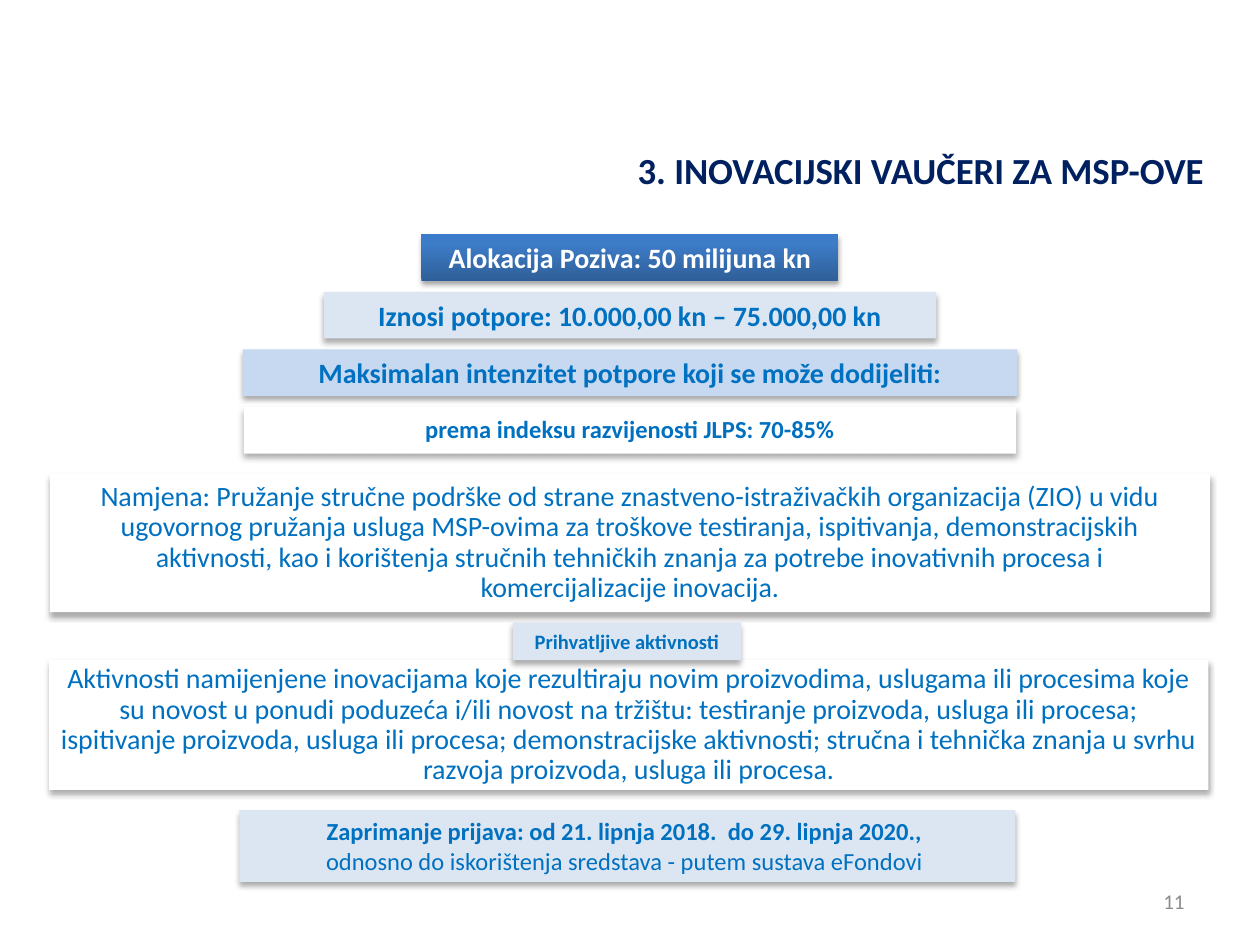
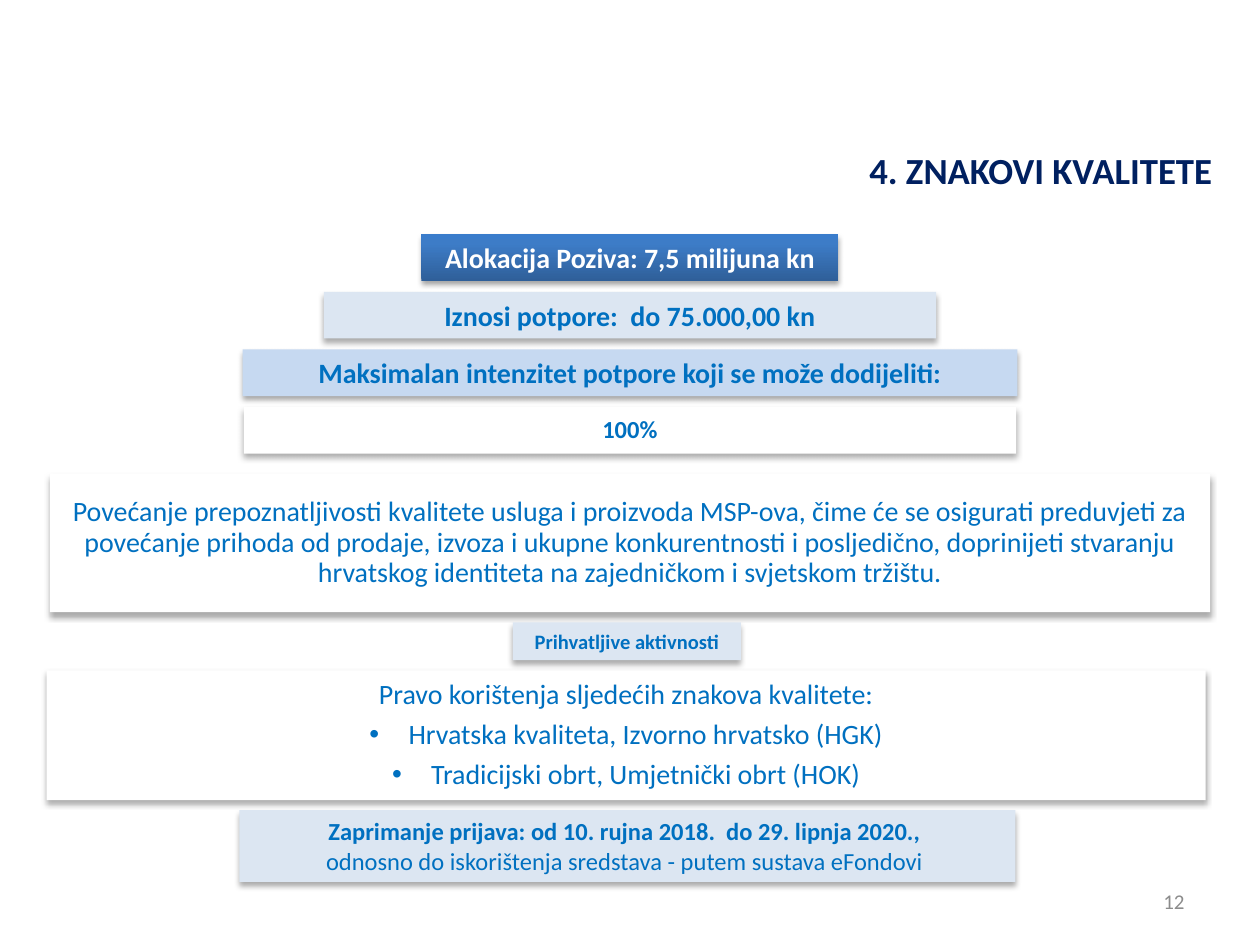
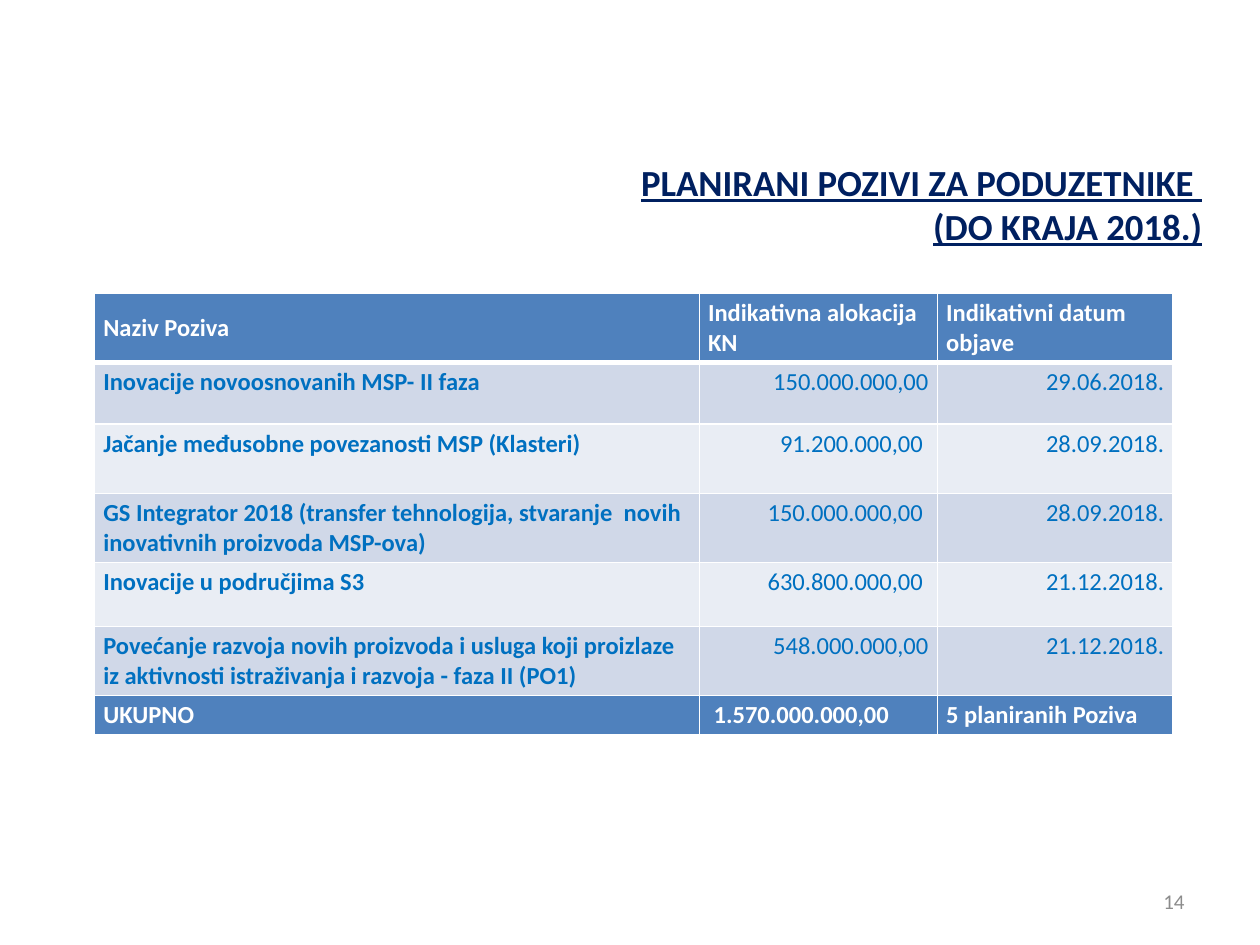
from pptx import Presentation
from pptx.dml.color import RGBColor
from pptx.enum.shapes import MSO_SHAPE
from pptx.enum.text import MSO_ANCHOR, PP_ALIGN
from pptx.oxml import parse_xml
from pptx.oxml.ns import nsdecls
from pptx.util import Inches, Pt

WIDE, HIGH = Inches(10), Inches(7.5)
UNIT = WIDE / 100
FONT = "Calibri"
WHITE = RGBColor(0xFF, 0xFF, 0xFF)
BLUE = RGBColor(0x00, 0x70, 0xC0)
NAVY = RGBColor(0x00, 0x20, 0x60)
GRAY = RGBColor(0x8C, 0x8C, 0x8C)
PALE = RGBColor(0xDC, 0xE6, 0xF2)
SKY = RGBColor(0xC6, 0xD9, 0xF1)
HEAD = RGBColor(0x4F, 0x81, 0xBD)
BANDS = RGBColor(0xD0, 0xD8, 0xE8), RGBColor(0xE9, 0xED, 0xF4)
DEEP = (0, "2F5F99"), (80, "3D7CC7"), (100, "3A7CCB")
SOFT = 32, 3.5, 2.2
FIRM = 35, 3.1, 1.8
LEFT, MID, RIGHT = PP_ALIGN.LEFT, PP_ALIGN.CENTER, PP_ALIGN.RIGHT

COLS = 48, 18.9, 18.7
ROWS = 4.2, 4.9, 5.5, 5.1, 5.1, 5.1, 2.5
CALLS = [
    ("Naziv Poziva", "Indikativna alokacija\nKN", "Indikativni datum objave"),
    ("Inovacije novoosnovanih MSP- II faza", "150.000.000,00", "29.06.2018."),
    ("Jačanje međusobne povezanosti MSP (Klasteri)", "91.200.000,00 ", "28.09.2018."),
    ("GS Integrator 2018 (transfer tehnologija, stvaranje  novih inovativnih proizvoda MSP-ova)",
     "150.000.000,00 ", "28.09.2018."),
    ("Inovacije u područjima S3", "630.800.000,00 ", "21.12.2018."),
    ("Povećanje razvoja novih proizvoda i usluga koji proizlaze iz aktivnosti istraživanja i razvoja - faza II (PO1)",
     "548.000.000,00", "21.12.2018."),
    ("UKUPNO", " 1.570.000.000,00", "5 planiranih Poziva"),
]


def grid(*cells):
    return [round(cell * UNIT) for cell in cells]


def write(frame, text, size=16, color=BLUE, bold=False, under=False, align=MID,
          lead=None, after=None, bullet=False, more=False):
    frame.word_wrap = True
    para = frame.add_paragraph() if more else frame.paragraphs[0]
    para.text = text
    if bullet:
        props = para._p.get_or_add_pPr()
        props.set("marL", str(Inches(0.31)))
        props.set("indent", str(-Inches(0.31)))
        props.append(parse_xml(f'<a:buFont {nsdecls("a")} typeface="Arial"/>'))
        props.append(parse_xml(f'<a:buChar {nsdecls("a")} char="•"/>'))
    para.alignment = align
    if lead:
        para.line_spacing = lead
    if after:
        para.space_after = Pt(after)
    for run in para.runs:
        font = run.font
        font.name, font.size, font.bold, font.underline = FONT, Pt(size), bold, under
        font.color.rgb = color


def shade(shape, alpha, blur, drop):
    shape.shadow.inherit = False
    shape._element.spPr.find("{*}effectLst").append(parse_xml(
        f'<a:outerShdw {nsdecls("a")} blurRad="{Pt(blur)}" dist="{Pt(drop)}" dir="5400000" rotWithShape="0">'
        f'<a:srgbClr val="000000"><a:alpha val="{alpha * 1000}"/></a:srgbClr></a:outerShdw>'))


def blend(shape, stops):
    marks = "".join(f'<a:gs pos="{pos * 1000}"><a:srgbClr val="{tone}"/></a:gs>' for pos, tone in stops)
    shape._element.spPr.find("{*}prstGeom").addnext(parse_xml(
        f'<a:gradFill {nsdecls("a")} rotWithShape="1"><a:gsLst>{marks}</a:gsLst>'
        '<a:lin ang="16200000" scaled="0"/></a:gradFill>'))


def strip(slide, top, width, height=3.7, fill=PALE, mid=50, cast=SOFT, anchor=MSO_ANCHOR.TOP):
    shape = slide.shapes.add_shape(MSO_SHAPE.RECTANGLE, *grid(mid - width / 2, top, width, height))
    if fill is DEEP:
        blend(shape, fill)
    else:
        shape.fill.solid()
        shape.fill.fore_color.rgb = fill
    shape.line.fill.background()
    shade(shape, *cast)
    frame = shape.text_frame
    frame.vertical_anchor = anchor
    return frame


def panel(slide, top, width, height, mid=50):
    frame = strip(slide, top, width, height, WHITE, mid, anchor=MSO_ANCHOR.MIDDLE)
    frame.margin_left = frame.margin_right = Inches(0.09)
    return frame


def label(slide, place, text, anchor=MSO_ANCHOR.MIDDLE, **style):
    frame = slide.shapes.add_textbox(*grid(*place)).text_frame
    frame.vertical_anchor = anchor
    write(frame, text, align=RIGHT, **style)


def title(slide, place, text, **style):
    label(slide, place, text, size=21, color=NAVY, bold=True, **style)


def start(deck, number):
    slide = deck.slides.add_slide(deck.slide_layouts[6])
    label(slide, (71.7, 69.5, 23.3, 4), number, size=12, color=GRAY)
    return slide


def offer(deck, number, name, fund, amount, rate, goal, deeds, top, mid, opening):
    slide = start(deck, number)
    title(slide, (31.1, 10.7, 66.1, 4.8), name, anchor=MSO_ANCHOR.TOP, lead=1.15)
    tops = [18.6 + 4.57 * step for step in range(4)]
    write(strip(slide, tops[0], 33.1, fill=DEEP, cast=FIRM), f"Alokacija Poziva: {fund}",
          color=WHITE, bold=True)
    write(strip(slide, tops[1], 48.6), f"Iznosi potpore: {amount}", bold=True)
    write(strip(slide, tops[2], 61.5, fill=SKY, cast=FIRM),
          "Maksimalan intenzitet potpore koji se može dodijeliti:", bold=True)
    write(panel(slide, tops[3], 61.3, 3.7), rate, size=14, bold=True, lead=0.9, after=5)
    write(panel(slide, 37.6, 92.1, 11), goal, lead=0.9, after=5.6)
    frame = panel(slide, top, 92, 10.3, mid)
    for index, deed in enumerate(deeds):
        write(frame, deed, lead=0.9, after=5.6, bullet=index > 0, more=index > 0)
    write(strip(slide, 49.4, 18.1, 3, mid=49.75), "Prihvatljive aktivnosti", size=11.7, bold=True)
    frame = strip(slide, 64.3, 61.6, 5.7, mid=49.8)
    write(frame, f"Zaprimanje prijava: od {opening}  do 29. lipnja 2020., ", size=14, bold=True)
    write(frame, "odnosno do iskorištenja sredstava - putem sustava eFondovi ", size=14, more=True)


def edge(cell, **sides):
    props = cell._tc.get_or_add_tcPr()
    for side, points in sides.items():
        props.append(parse_xml(
            f'<a:ln{side} {nsdecls("a")} w="{Pt(points)}"><a:solidFill>'
            f'<a:srgbClr val="{WHITE}"/></a:solidFill></a:ln{side}>'))


def chart(slide):
    table = slide.shapes.add_table(len(ROWS), len(COLS), *grid(7.5, 23.3, sum(COLS), sum(ROWS))).table
    for col, width in zip(table.columns, grid(*COLS)):
        col.width = width
    for row, height in zip(table.rows, grid(*ROWS)):
        row.height = height
    last = len(CALLS) - 1
    for r, words in enumerate(CALLS):
        ends = r in (0, last)
        for c, word in enumerate(words):
            cell = table.cell(r, c)
            edge(cell, L=1, R=1, T=3 if r == 1 else 1, B=3 if r == 0 else 1)
            cell.fill.solid()
            cell.fill.fore_color.rgb = HEAD if ends else BANDS[(r - 1) % 2]
            cell.margin_left = cell.margin_right = Inches(0.07)
            cell.margin_top = cell.margin_bottom = Inches(0.04)
            for index, line in enumerate(word.split("\n")):
                write(cell.text_frame, line, size=14, color=WHITE if ends else BLUE,
                      bold=ends or c == 0, align=LEFT if ends or c == 0 else RIGHT, more=index > 0)
    table.cell(0, 0).vertical_anchor = MSO_ANCHOR.MIDDLE


def main():
    deck = Presentation()
    deck.slide_width, deck.slide_height = WIDE, HIGH
    offer(deck, "11", "3. INOVACIJSKI VAUČERI ZA MSP-OVE ", "50 milijuna kn",
          "10.000,00 kn – 75.000,00 kn", "prema indeksu razvijenosti JLPS: 70-85%",
          "Namjena: Pružanje stručne podrške od strane znastveno-istraživačkih organizacija (ZIO) u vidu "
          "ugovornog pružanja usluga MSP-ovima za troškove testiranja, ispitivanja, demonstracijskih "
          "aktivnosti, kao i korištenja stručnih tehničkih znanja za potrebe inovativnih procesa i "
          "komercijalizacije inovacija.",
          ["Aktivnosti namijenjene inovacijama koje rezultiraju novim proizvodima, uslugama ili procesima "
           "koje su novost u ponudi poduzeća i/ili novost na tržištu: testiranje proizvoda, usluga ili "
           "procesa; ispitivanje proizvoda, usluga ili procesa; demonstracijske aktivnosti; stručna i "
           "tehnička znanja u svrhu razvoja proizvoda, usluga ili procesa."],
          52.4, 49.9, "21. lipnja 2018.")
    offer(deck, "12", "4. ZNAKOVI KVALITETE", "7,5 milijuna kn", " do 75.000,00 kn", "100%",
          "Povećanje prepoznatljivosti kvalitete usluga i proizvoda MSP-ova, čime će se osigurati "
          "preduvjeti za povećanje prihoda od prodaje, izvoza i ukupne konkurentnosti i posljedično, "
          "doprinijeti stvaranju hrvatskog identiteta na zajedničkom i svjetskom tržištu.",
          ["Pravo korištenja sljedećih znakova kvalitete:",
           "Hrvatska kvaliteta, Izvorno hrvatsko (HGK)",
           "Tradicijski obrt, Umjetnički obrt (HOK)"],
          53.2, 49.7, "10. rujna 2018.")
    slide = start(deck, "14")
    title(slide, (35, 11.5, 61.4, 9.4), "PLANIRANI POZIVI ZA PODUZETNIKE \v(DO KRAJA 2018.)", under=True)
    chart(slide)
    deck.save("out.pptx")


if __name__ == "__main__":
    main()
